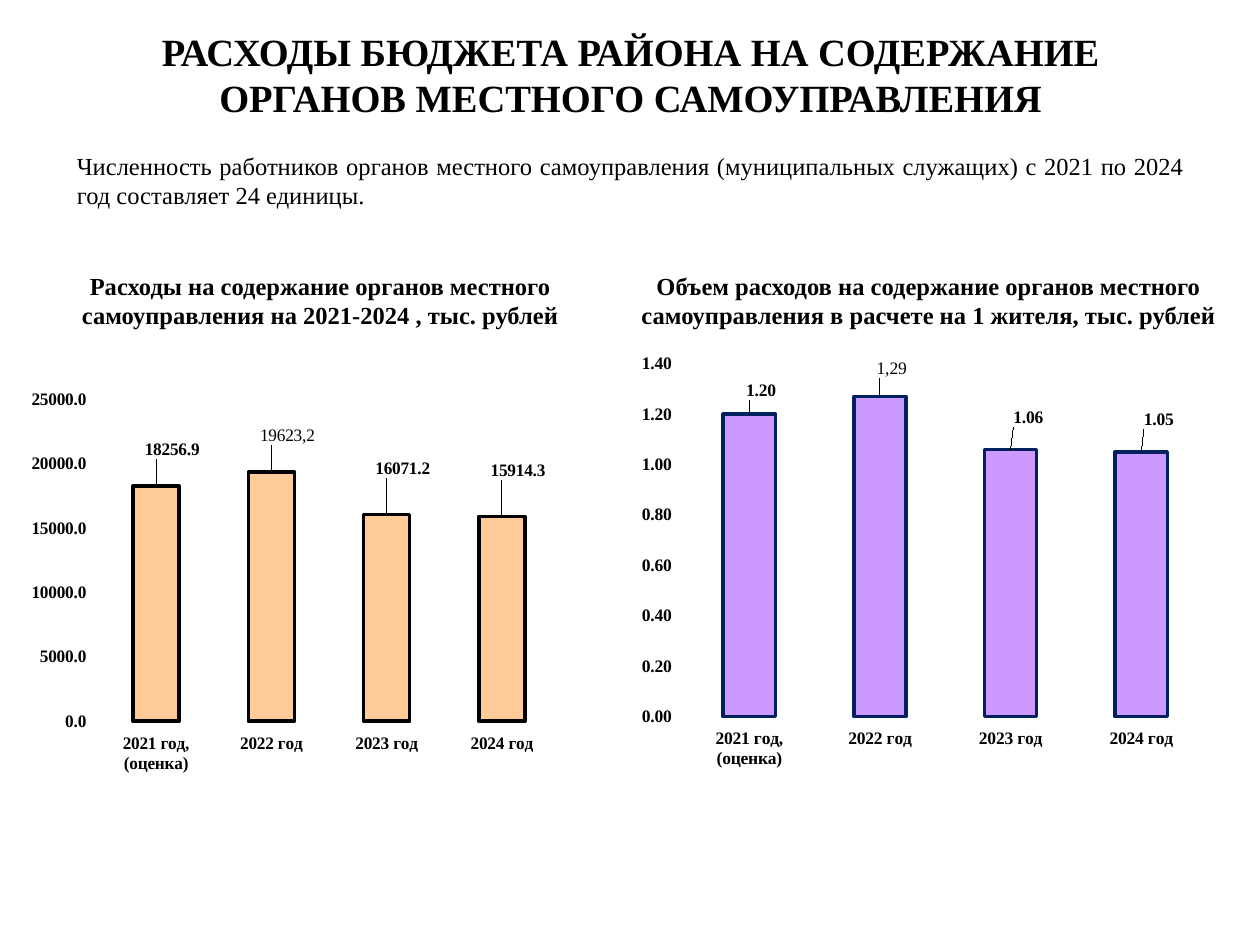
from pptx import Presentation
from pptx.chart.data import CategoryChartData
from pptx.dml.color import RGBColor
from pptx.enum.chart import XL_CHART_TYPE as ChartType, XL_LABEL_POSITION as LabelPos
from pptx.enum.text import MSO_ANCHOR as Anchor, MSO_AUTO_SIZE as AutoSize, PP_ALIGN as Align
from pptx.oxml import parse_xml
from pptx.oxml.ns import nsdecls
from pptx.util import Pt
from dataclasses import dataclass


@dataclass(frozen=True)
class Theme:
    font: str = "Times New Roman"
    ink: str = "000000"
    paper: str = "FFFFFF"
    title: float = 22
    body: float = 14
    chart: float = 10
    bar_line: float = 2
    hairline: float = 0.25


THEME = Theme()

TITLE = "РАСХОДЫ БЮДЖЕТА РАЙОНА НА СОДЕРЖАНИЕ ОРГАНОВ МЕСТНОГО САМОУПРАВЛЕНИЯ"
STAFF = ("Численность работников органов местного самоуправления "
         "(муниципальных служащих) с 2021 по 2024 год составляет 24 единицы.")
YEARS = ["2021 год, (оценка)", "2022 год", "2023 год", "2024 год"]
CHARTS = [
    dict(heading="Расходы на содержание органов местного самоуправления на 2021-2024 , тыс. рублей",
         heading_box=(13, 151.2, 340, 41), box=(18, 198, 311, 252),
         values=[18256.9, 19360.4, 16071.2, 15914.3], typed={1: "19623,2"},
         number="0.0", top=25000, step=5000, fill="FFCC99", outline="000000",
         plot=(0.11, 0.12, 0.86, 0.73),
         shifts=[(0.03, -0.05), (0.03, -0.05), (0.03, -0.07), (0.03, -0.07)]),
    dict(heading="Объем расходов на содержание органов местного самоуправления "
                 "в расчете на 1 жителя, тыс. рублей",
         heading_box=(352.8, 151.2, 355.7, 38), box=(360.7, 198, 335.5, 246),
         values=[1.2, 1.27, 1.06, 1.05], typed={1: "1,29"},
         number="0.00", top=1.4, step=0.2, fill="CC99FF", outline="002060",
         plot=(0.09, 0.04, 0.89, 0.82),
         shifts=[(0.02, -0.02), (0.02, -0.03), (0.03, -0.04), (0.03, -0.04)]),
]


def place(shape, box):
    shape.left, shape.top, shape.width, shape.height = map(Pt, box)


def style(font, size, bold=False):
    font.name, font.size, font.bold = THEME.font, Pt(size), bold
    font.color.rgb = RGBColor.from_string(THEME.ink)


def write(frame, text, size=THEME.body, bold=False, align=Align.CENTER):
    frame.word_wrap = True
    frame.auto_size = AutoSize.NONE
    frame.vertical_anchor = Anchor.TOP
    paragraph = frame.paragraphs[0]
    paragraph.alignment = align
    paragraph.space_before = Pt(0)
    run = paragraph.add_run()
    run.text = text
    style(run.font, size, bold)
    return paragraph


def outline(line, color, width):
    line.color.rgb = RGBColor.from_string(color)
    line.width = Pt(width)


def manual_layout(tags, numbers, target=""):
    values = "".join(f'<c:{tag} val="{number}"/>' for tag, number in zip(tags, numbers))
    return parse_xml(f'<c:layout {nsdecls("c")}><c:manualLayout>{target}{values}'
                     '</c:manualLayout></c:layout>')


def add_labels(series, part):
    labels = series.data_labels
    labels.show_value = True
    labels.number_format = part["number"]
    labels.number_format_is_linked = False
    labels.position = LabelPos.OUTSIDE_END
    style(labels.font, THEME.chart, bold=True)
    for index, shift in enumerate(part["shifts"]):
        label = series.points[index].data_label
        label.position = LabelPos.OUTSIDE_END
        if index in part["typed"]:
            run = label.text_frame.paragraphs[0].add_run()
            run.text = part["typed"][index]
            style(run.font, THEME.chart)
        else:
            style(label.font, THEME.chart, bold=True)
        anchor = series._element.xpath(f'.//c:dLbl/c:idx[@val="{index}"]')[0]
        anchor.addnext(manual_layout("xy", shift))


def add_column_chart(slide, part):
    data = CategoryChartData(number_format=part["number"])
    data.categories = YEARS
    data.add_series("Series 1", part["values"])
    chart = slide.shapes.add_chart(ChartType.COLUMN_CLUSTERED,
                                   *map(Pt, part["box"]), data).chart
    chart.has_title = chart.has_legend = False
    style(chart.font, THEME.chart)
    for axis in (chart.category_axis, chart.value_axis):
        style(axis.tick_labels.font, THEME.chart, bold=True)
        outline(axis.format.line, THEME.paper, THEME.hairline)
    amounts = chart.value_axis
    amounts.minimum_scale, amounts.maximum_scale = 0, part["top"]
    amounts.major_unit = part["step"]
    amounts.tick_labels.number_format = part["number"]
    amounts.tick_labels.number_format_is_linked = False
    outline(amounts.major_gridlines.format.line, THEME.paper, THEME.hairline)

    plot = chart.plots[0]
    plot.gap_width = 150
    plot.vary_by_categories = False
    series = plot.series[0]
    series.format.fill.solid()
    series.format.fill.fore_color.rgb = RGBColor.from_string(part["fill"])
    outline(series.format.line, part["outline"], THEME.bar_line)
    add_labels(series, part)

    plot_area = chart._chartSpace.xpath("c:chart/c:plotArea")[0]
    for old in plot_area.xpath("c:layout"):
        plot_area.remove(old)
    plot_area.insert(0, manual_layout(
        ("xMode", "yMode", "x", "y", "w", "h"), ("edge", "edge", *part["plot"]),
        '<c:layoutTarget val="inner"/>'))


def main():
    deck = Presentation()
    deck.slide_width, deck.slide_height = Pt(720), Pt(540)
    slide = deck.slides.add_slide(deck.slide_layouts[1])
    title, staff = slide.placeholders
    place(title, (36.7, 12.2, 647.3, 64))
    write(title.text_frame, TITLE, size=THEME.title, bold=True)
    place(staff, (36.7, 82.7, 647.3, 42))
    properties = write(staff.text_frame, STAFF, align=Align.JUSTIFY)._p.get_or_add_pPr()
    properties.set("marL", "0")
    properties.set("indent", "0")
    properties.append(parse_xml(f'<a:buNone {nsdecls("a")}/>'))
    for part in CHARTS:
        heading = slide.shapes.add_textbox(*map(Pt, part["heading_box"]))
        write(heading.text_frame, part["heading"], bold=True)
        add_column_chart(slide, part)
    deck.save("out.pptx")


if __name__ == "__main__":
    main()
